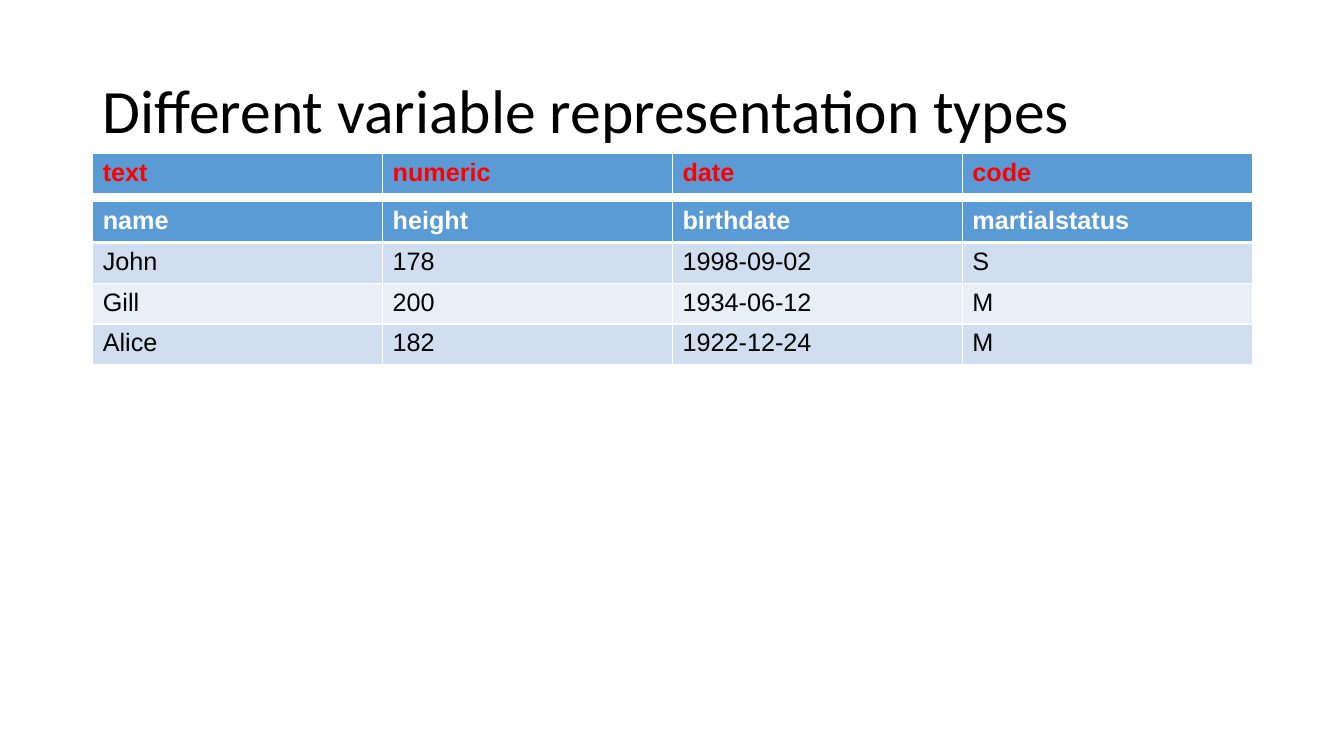
from lxml import etree
from pptx import Presentation
from pptx.dml.color import RGBColor
from pptx.enum import text
from pptx.oxml import ns
from pptx.util import Inches, Pt

HEADER_FILL = "5B9BD5"
BAND_FILLS = ("D0DEEF", "E9EFF7")
WHITE, BLACK, RED = "FFFFFF", "000000", "FF0000"

TYPES = [["text", "numeric", "date", "code"]]
PEOPLE = [
    ["name", "height", "birthdate", "martialstatus"],
    ["John", "178", "1998-09-02", "S"],
    ["Gill", "200", "1934-06-12", "M"],
    ["Alice", "182", "1922-12-24", "M"],
]


def rgb(value):
    return RGBColor.from_string(value)


def write(paragraph, words, color, **font_values):
    run = paragraph.add_run()
    run.text = words
    for key, value in font_values.items():
        setattr(run.font, key, value)
    run.font.color.rgb = rgb(color)


def set_borders(cell, top, bottom):
    properties = cell._tc.get_or_add_tcPr()
    widths = {"lnL": 1, "lnR": 1, "lnT": top, "lnB": bottom}
    # Border lines come before the fill, in this order
    for position, (side, width) in enumerate(widths.items()):
        line = etree.Element(ns.qn(f"a:{side}"), w=str(Pt(width)))
        fill = etree.SubElement(line, ns.qn("a:solidFill"))
        etree.SubElement(fill, ns.qn("a:srgbClr"), val=WHITE)
        properties.insert(position, line)


def add_title(slide, words, left, top, width, height):
    title = slide.shapes.add_textbox(left, top, width, height)
    frame = title.text_frame
    frame.word_wrap = True
    frame.vertical_anchor = text.MSO_ANCHOR.MIDDLE
    frame.paragraphs[0].line_spacing = 0.9
    write(frame.paragraphs[0], words, BLACK, name="Calibri", size=Pt(44))


def add_banded_table(slide, rows, header_color, left, top, width, height):
    table = slide.shapes.add_table(
        len(rows), len(rows[0]), left, top, width, height).table
    for r, values in enumerate(rows):
        header = r == 0
        fill = HEADER_FILL if header else BAND_FILLS[(r - 1) % 2]
        for c, value in enumerate(values):
            cell = table.cell(r, c)
            cell.fill.solid()
            cell.fill.fore_color.rgb = rgb(fill)
            # A thick line parts the header from the first data row
            set_borders(cell, top=3 if r == 1 else 1, bottom=3 if header else 1)
            write(cell.text_frame.paragraphs[0], value,
                  header_color if header else BLACK,
                  name="Arial", size=Pt(18), bold=header)


def build_slide(slide, left, width):
    add_title(slide, "Different variable representation types",
              left, Inches(0.4), width, Inches(1.45))
    # People and their values
    add_banded_table(slide, PEOPLE, WHITE, left, Inches(2), width, Inches(1.62))
    # Type of each column
    add_banded_table(slide, TYPES, RED, left, Inches(1.52), width, Inches(0.41))


def main():
    deck = Presentation()
    deck.slide_width, deck.slide_height = Inches(13.33), Inches(7.5)
    slide = deck.slides.add_slide(deck.slide_layouts[6])
    build_slide(slide, Inches(0.92), Inches(11.5))
    deck.save("out.pptx")


if __name__ == "__main__":
    main()
